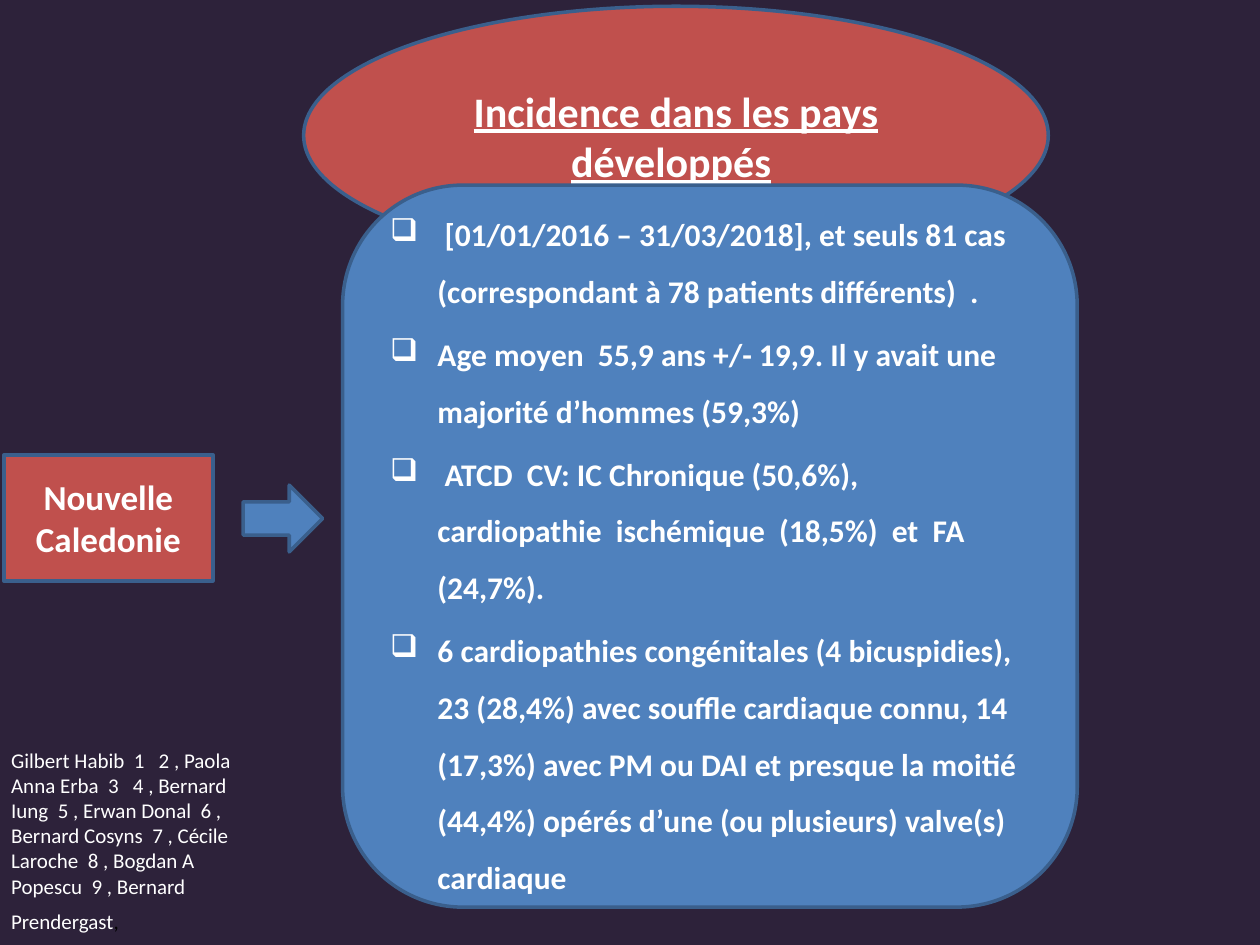
from lxml.etree import SubElement
from pptx import Presentation
from pptx.dml.color import RGBColor
from pptx.enum.shapes import MSO_SHAPE
from pptx.enum.text import MSO_ANCHOR, MSO_AUTO_SIZE, PP_ALIGN
from pptx.oxml.ns import qn
from pptx.util import Pt

FACTS = [
    " [01/01/2016 – 31/03/2018], et seuls 81 cas (correspondant à 78 patients différents)  .",
    "Age moyen  55,9 ans +/- 19,9. Il y avait une majorité d’hommes (59,3%)",
    " ATCD  CV: IC Chronique (50,6%), cardiopathie  ischémique  (18,5%)  et  FA (24,7%).",
    "6 cardiopathies congénitales (4 bicuspidies), 23 (28,4%) avec souffle cardiaque connu, "
    "14 (17,3%) avec PM ou DAI et presque la moitié (44,4%) opérés d’une (ou plusieurs) "
    "valve(s) cardiaque",
]
NAMES = (
    "Gilbert Habib  1   2 , Paola Anna Erba  3   4 , Bernard Iung  5 , "
    "Erwan Donal  6 , Bernard Cosyns  7 , Cécile Laroche  8 , "
    "Bogdan A Popescu  9 , Bernard Prendergast"
)


def paint(hue):
    """Turn a hex string into a colour."""
    return RGBColor.from_string(hue)


def write(para, text, size=18, hue="FFFFFF", bold=False, line=False):
    """Add a run of text in the given format."""
    run = para.add_run()
    run.text = text
    font = run.font
    font.name, font.size = "Calibri", Pt(size)
    font.bold, font.underline = bold, line
    font.color.rgb = paint(hue)


class Deck:
    """Hold the style and the current slide."""

    red, blue, edge, dark = "C0504D", "4F81BD", "3A5F8C", "2D223A"

    def __init__(self):
        """Open a title-only slide with a dark ground."""
        self.show = Presentation()
        self.show.slide_width, self.show.slide_height = Pt(720), Pt(540)
        self.slide = self.show.slides.add_slide(self.show.slide_layouts[5])
        ground = self.slide.background.fill
        ground.solid()
        ground.fore_color.rgb = paint(self.dark)

    def shape(self, kind, box, hue):
        """Add a filled, outlined shape and return its text frame."""
        item = self.slide.shapes.add_shape(kind, *map(Pt, box))
        item.shadow.inherit = False
        item.fill.solid()
        item.fill.fore_color.rgb = paint(hue)
        item.line.color.rgb = paint(self.edge)
        item.line.width = Pt(2)
        frame = item.text_frame
        frame.word_wrap = True
        frame.vertical_anchor = MSO_ANCHOR.MIDDLE
        return frame

    def title(self, text, box):
        """Set the title in front of the shapes drawn so far."""
        item = self.slide.shapes.title
        item.left, item.top, item.width, item.height = map(Pt, box)
        self.slide.shapes.element.append(item.element)
        frame = item.text_frame
        frame.auto_size = MSO_AUTO_SIZE.NONE
        frame.vertical_anchor = MSO_ANCHOR.MIDDLE
        para = frame.paragraphs[0]
        para.alignment = PP_ALIGN.CENTER
        write(para, text, size=24, bold=True, line=True)
        write(para, " ", size=24, bold=True)

    def label(self, lines, box):
        """Add a red box with centred lines."""
        frame = self.shape(MSO_SHAPE.RECTANGLE, box, self.red)
        for rank, text in enumerate(lines):
            para = frame.add_paragraph() if rank else frame.paragraphs[0]
            para.alignment = PP_ALIGN.CENTER
            write(para, text, size=20, bold=True)

    def panel(self, items, box):
        """Add a rounded panel with a list of box bullets."""
        frame = self.shape(MSO_SHAPE.ROUNDED_RECTANGLE, box, self.blue)
        for rank, text in enumerate(items):
            para = frame.add_paragraph() if rank else frame.paragraphs[0]
            para.alignment = PP_ALIGN.LEFT
            para.line_spacing, para.space_before = 1.5, Pt(3.6)
            write(para, text, bold=True)
            props = para._p.get_or_add_pPr()
            props.set("marL", str(Pt(27)))
            props.set("indent", str(-Pt(27)))
            SubElement(props, qn("a:buChar"), char="❑")

    def note(self, text, box):
        """Add the list of names as a small text box."""
        frame = self.slide.shapes.add_textbox(*map(Pt, box)).text_frame
        frame.word_wrap = True
        frame.auto_size = MSO_AUTO_SIZE.SHAPE_TO_FIT_TEXT
        para = frame.paragraphs[0]
        write(para, text, size=12)
        write(para, ",", size=12, hue="000000")
        write(para, " ", hue="000000")


def main():
    """Build the slide and save it."""
    deck = Deck()
    deck.shape(MSO_SHAPE.OVAL, (173.5, 3.6, 425.5, 147.6), deck.red)
    deck.title("Incidence dans les pays développés", (235.8, 25.2, 300.9, 104.4))
    deck.panel(FACTS, (195.8, 105.8, 419.8, 412.6))
    deck.label(["Nouvelle", "Caledonie"], (2.2, 260, 119.5, 72))
    deck.shape(MSO_SHAPE.RIGHT_ARROW, (139, 277.2, 45.4, 38.2), deck.blue)
    deck.note(NAMES, (-0.7, 423.4, 159.8, 116.6))
    deck.show.save("out.pptx")


if __name__ == "__main__":
    main()
